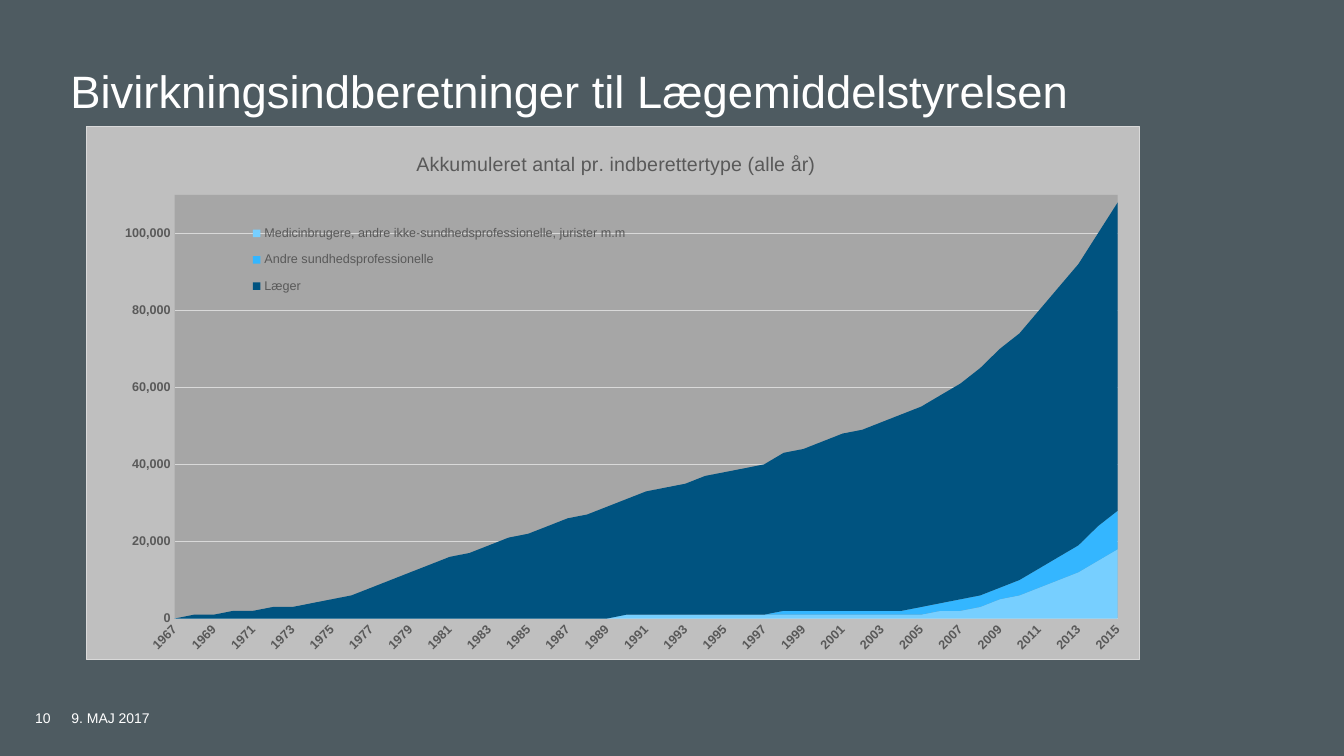
from pptx import Presentation
from pptx.chart.data import CategoryChartData
from pptx.dml.color import RGBColor
from pptx.enum.chart import XL_CHART_TYPE, XL_LEGEND_POSITION, XL_TICK_MARK
from pptx.enum.text import MSO_ANCHOR
from pptx.oxml import parse_xml
from pptx.oxml.ns import nsdecls
from pptx.util import Pt

AREA = XL_CHART_TYPE.AREA_STACKED
TOP_LEGEND = XL_LEGEND_POSITION.TOP
NO_TICK = XL_TICK_MARK.NONE
TOP, BOTTOM = MSO_ANCHOR.TOP, MSO_ANCHOR.BOTTOM

COLORS = {
    "background": "4E5B61", "white": "FFFFFF", "text": "595959", "line": "D9D9D9",
    "panel": "BFBFBF", "plot": "A6A6A6",
    "users": "77CFFF", "others": "34B6FF", "doctors": "005380",
}
TEXTS = [
    ("Bivirkningsindberetninger til Lægemiddelstyrelsen",
     (25.2, 23, 907.2, 99.4), (25.2, 20.2, 22.3, 20.2), TOP, 32.4, 40.5),
    ("9. MAJ 2017", (51.1, 501.8, 108, 17.3), (0, 0, 0, 0), BOTTOM, 10, None),
    ("10", (25.2, 501.8, 36, 17.3), (0, 0, 0, 0), BOTTOM, 10, None),
]
CHART_TITLE = "Akkumuleret antal pr. indberettertype (alle år)"
CHART_FRAME = (61.2, 90, 753.8, 381.6)
YEARS = range(1967, 2016)
THOUSANDS = [
    ("Medicinbrugere, andre ikke-sundhedsprofessionelle, jurister m.m", "users",
     [0] * 23 + [1] * 16 + [2, 2, 3, 5, 6, 8, 10, 12, 15, 18]),
    ("Andre sundhedsprofessionelle", "others",
     [0] * 31 + [1] * 7 + [2, 2, 3, 3, 3, 4, 5, 6, 7, 9, 10]),
    ("Læger", "doctors",
     [0, 1, 1, 2, 2, 3, 3, 4, 5, 6, 8, 10, 12, 14, 16, 17, 19, 21, 22, 24, 26, 27, 29, 30, 32,
      33, 34, 36, 37, 38, 39, 41, 42, 44, 46, 47, 49, 51, 52, 54, 56, 59, 62, 64, 67, 70, 73,
      76, 80]),
]
LAYOUTS = [
    ("c:plotArea", 0, {"layoutTarget": "inner", "xMode": "edge", "yMode": "edge",
                       "x": 0.084, "y": 0.128, "w": 0.895, "h": 0.795}),
    ("c:legend", 1, {"xMode": "edge", "yMode": "edge",
                     "x": 0.15, "y": 0.165, "w": 0.37, "h": 0.17}),
    ("c:title", 1, {"xMode": "edge", "yMode": "edge", "x": 0.31, "y": 0.04}),
]


def rgb(name):
    return RGBColor.from_string(COLORS[name])


def set_font(font, color, **values):
    for key, value in {"name": "Arial", "bold": False, **values}.items():
        setattr(font, key, value)
    font.color.rgb = rgb(color)


def add_text(page, text, frame, insets, anchor, size, spacing):
    box = page.shapes.add_textbox(*map(Pt, frame)).text_frame
    sides = ("margin_left", "margin_top", "margin_right", "margin_bottom")
    values = {"word_wrap": True, "vertical_anchor": anchor, **dict(zip(sides, map(Pt, insets)))}
    for key, value in values.items():
        setattr(box, key, value)
    para = box.paragraphs[0]
    if spacing:
        para.line_spacing = Pt(spacing)
    span = para.add_run()
    span.text = text
    set_font(span.font, "white", size=Pt(size))


def panel_fill(fill, line):
    outline = f'<a:solidFill><a:srgbClr val="{COLORS[line]}"/></a:solidFill>' if line else "<a:noFill/>"
    return parse_xml(
        f'<c:spPr {nsdecls("c", "a")}><a:solidFill><a:srgbClr val="{COLORS[fill]}"/></a:solidFill>'
        f'<a:ln w="{Pt(0.75)}">{outline}</a:ln></c:spPr>')


def place(part, index, settings):
    for old in part.xpath("c:layout"):
        part.remove(old)
    items = "".join(f'<c:{key} val="{value}"/>' for key, value in settings.items())
    part.insert(index, parse_xml(
        f'<c:layout {nsdecls("c")}><c:manualLayout>{items}</c:manualLayout></c:layout>'))


def style_line(line):
    line.color.rgb = rgb("line")
    line.width = Pt(0.75)


def add_report_chart(page):
    data = CategoryChartData(number_format="#,##0")
    data.categories = [str(year) for year in YEARS]
    for name, _, values in THOUSANDS:
        data.add_series(name, [value * 1000 for value in values])
    chart = page.shapes.add_chart(AREA, *map(Pt, CHART_FRAME), data).chart
    set_font(chart.font, "text", size=Pt(10))

    for series, (_, color, _) in zip(chart.plots[0].series, THOUSANDS):
        series.format.fill.solid()
        series.format.fill.fore_color.rgb = rgb(color)
        series.format.line.fill.background()

    chart.has_title = True
    title = chart.chart_title.text_frame
    title.text = CHART_TITLE
    set_font(title.paragraphs[0].runs[0].font, "text", size=Pt(14))

    chart.has_legend = True
    chart.legend.position = TOP_LEGEND
    chart.legend.include_in_layout = False
    set_font(chart.legend.font, "text", size=Pt(9))

    years, counts = chart.category_axis, chart.value_axis
    for axis in (years, counts):
        axis.major_tick_mark = axis.minor_tick_mark = NO_TICK
        set_font(axis.tick_labels.font, "text", size=Pt(9), bold=True)
    limits = {"minimum_scale": 0, "maximum_scale": 110000, "major_unit": 20000,
              "has_major_gridlines": True}
    for key, value in limits.items():
        setattr(counts, key, value)
    counts.tick_labels.number_format = "#,##0"
    counts.tick_labels.number_format_is_linked = False
    counts.format.line.fill.background()
    style_line(counts.major_gridlines.format.line)
    years.has_major_gridlines = False
    style_line(years.format.line)

    root = chart.element
    root.xpath("//c:catAx/c:txPr/a:bodyPr")[0].set("rot", "-2700000")
    root.xpath("//c:catAx/c:noMultiLvlLbl")[0].addprevious(
        parse_xml(f'<c:tickLblSkip {nsdecls("c")} val="2"/>'))
    for crossing in root.xpath("//c:valAx/c:crossBetween"):
        crossing.set("val", "midCat")
    for tag, index, settings in LAYOUTS:
        place(root.xpath(f"c:chart//{tag}")[0], index, settings)
    root.xpath("c:chart/c:plotArea")[0].append(panel_fill("plot", None))
    root.xpath("c:chart")[0].addnext(panel_fill("panel", "line"))


def main():
    deck = Presentation()
    deck.slide_width, deck.slide_height = Pt(960.5), Pt(540)
    page = deck.slides.add_slide(deck.slide_layouts[6])
    page.background.fill.solid()
    page.background.fill.fore_color.rgb = rgb("background")
    for item in TEXTS:
        add_text(page, *item)
    add_report_chart(page)
    deck.save("out.pptx")


if __name__ == "__main__":
    main()
